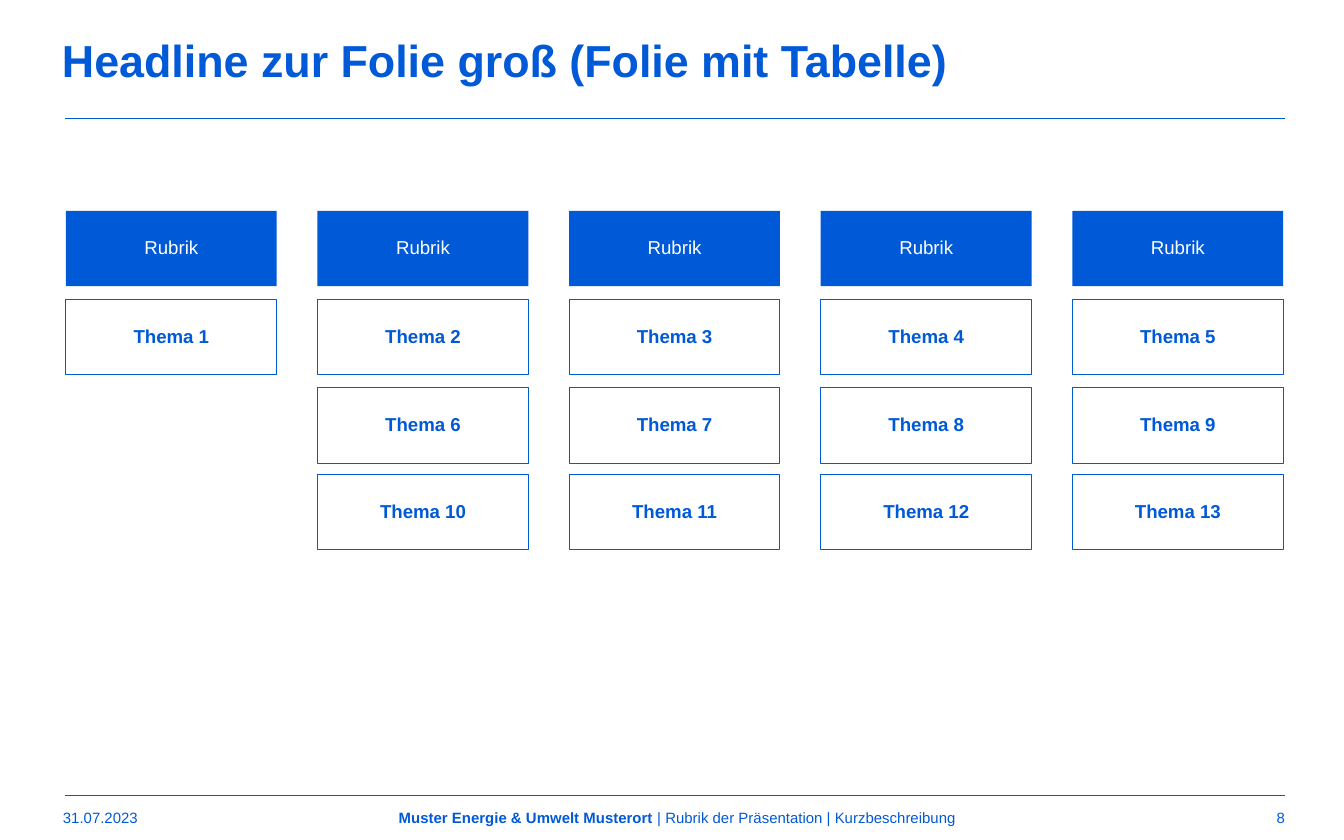
from dataclasses import dataclass

from lxml.etree import SubElement
from pptx import Presentation
from pptx.dml.color import RGBColor
from pptx.enum.shapes import MSO_CONNECTOR, MSO_SHAPE
from pptx.enum.text import MSO_ANCHOR, PP_ALIGN
from pptx.oxml.ns import qn
from pptx.util import Pt

BLUE, WHITE = "0059D7", "FFFFFF"
FONT = "Arial"
LEFT, COL_STEP = 35.3, 134.8
BOX_W, BOX_H = 113, 40.3
COLUMNS = 5


@dataclass
class Row:
    top: float
    labels: list[str]
    header: bool = False


@dataclass
class FooterField:
    left: float
    width: float
    align: PP_ALIGN
    runs: list[tuple[str, bool]]


ROWS = [
    Row(113, ["Rubrik"] * COLUMNS, header=True),
    Row(160.5, [f"Thema {n}" for n in range(1, 6)]),
    Row(207.8, [f"Thema {n}" for n in range(6, 10)]),
    Row(254.2, [f"Thema {n}" for n in range(10, 14)]),
]
FOOTER = [
    FooterField(26.6, 162, PP_ALIGN.LEFT, [("31.07.2023", False)]),
    FooterField(509, 186.5, PP_ALIGN.RIGHT, [("8", False)]),
    FooterField(205.2, 315.4, PP_ALIGN.CENTER, [
        ("Muster Energie & Umwelt Musterort ", True),
        ("| Rubrik der Präsentation | Kurzbeschreibung", False),
    ]),
]


def rgb(value: str) -> RGBColor:
    return RGBColor.from_string(value)


def style(p, size: float, color: str, align: PP_ALIGN, bold: bool = False) -> None:
    p.alignment = align
    p.font.name = FONT
    p.font.size = Pt(size)
    p.font.bold = bold
    p.font.color.rgb = rgb(color)


def add_rule(s, y: float) -> None:
    """Draw a thin horizontal line across the content width."""
    line = s.shapes.add_connector(
        MSO_CONNECTOR.STRAIGHT, Pt(34.8), Pt(y), Pt(688.4), Pt(y))
    line.line.color.rgb = rgb(BLUE)
    line.line.width = Pt(0.5)
    SubElement(line._element.spPr, qn("a:effectLst"))


def add_box(s, left: float, top: float, label: str, header: bool) -> None:
    sp = s.shapes.add_shape(
        MSO_SHAPE.RECTANGLE, Pt(left), Pt(top), Pt(BOX_W), Pt(BOX_H))
    sp.shadow.inherit = False
    sp.fill.solid()
    sp.fill.fore_color.rgb = rgb(BLUE if header else WHITE)
    if header:
        sp.line.fill.background()
    else:
        sp.line.color.rgb = rgb(BLUE)
        sp.line.width = Pt(0.5)
    tf = sp.text_frame
    tf.margin_left = tf.margin_right = tf.margin_top = tf.margin_bottom = 0
    tf.vertical_anchor = MSO_ANCHOR.MIDDLE
    p = tf.paragraphs[0]
    p.text = label
    p.line_spacing = 0.9
    style(p, 10, WHITE if header else BLUE, PP_ALIGN.CENTER, bold=not header)


def add_row(s, row: Row) -> None:
    """Draw the boxes of a row, aligned to the rightmost column."""
    first = COLUMNS - len(row.labels)
    for col, label in enumerate(row.labels, first):
        add_box(s, LEFT + col * COL_STEP, row.top, label, row.header)


def add_footer_field(s, field: FooterField) -> None:
    sp = s.shapes.add_textbox(Pt(field.left), Pt(426.2), Pt(field.width), Pt(23.8))
    tf = sp.text_frame
    tf.word_wrap = True
    tf.vertical_anchor = MSO_ANCHOR.MIDDLE
    p = tf.paragraphs[0]
    style(p, 8, BLUE, field.align)
    for text, bold in field.runs:
        r = p.add_run()
        r.text = text
        r.font.bold = bold


def set_title(s, text: str) -> None:
    sp = s.shapes.title
    sp.left, sp.top, sp.width, sp.height = Pt(26), Pt(15), Pt(620.6), Pt(35.3)
    tf = sp.text_frame
    tf.word_wrap = True
    tf.vertical_anchor = MSO_ANCHOR.BOTTOM
    p = tf.paragraphs[0]
    p.text = text
    p.line_spacing = 0.9
    style(p, 24, BLUE, PP_ALIGN.LEFT, bold=True)


def main() -> None:
    prs = Presentation()
    prs.slide_width, prs.slide_height = Pt(720), Pt(450)
    s = prs.slides.add_slide(prs.slide_layouts[5])
    set_title(s, "Headline zur Folie groß (Folie mit Tabelle)")
    for y in (63.5, 426.2):
        add_rule(s, y)
    for row in ROWS:
        add_row(s, row)
    for field in FOOTER:
        add_footer_field(s, field)
    prs.save("out.pptx")


if __name__ == "__main__":
    main()
